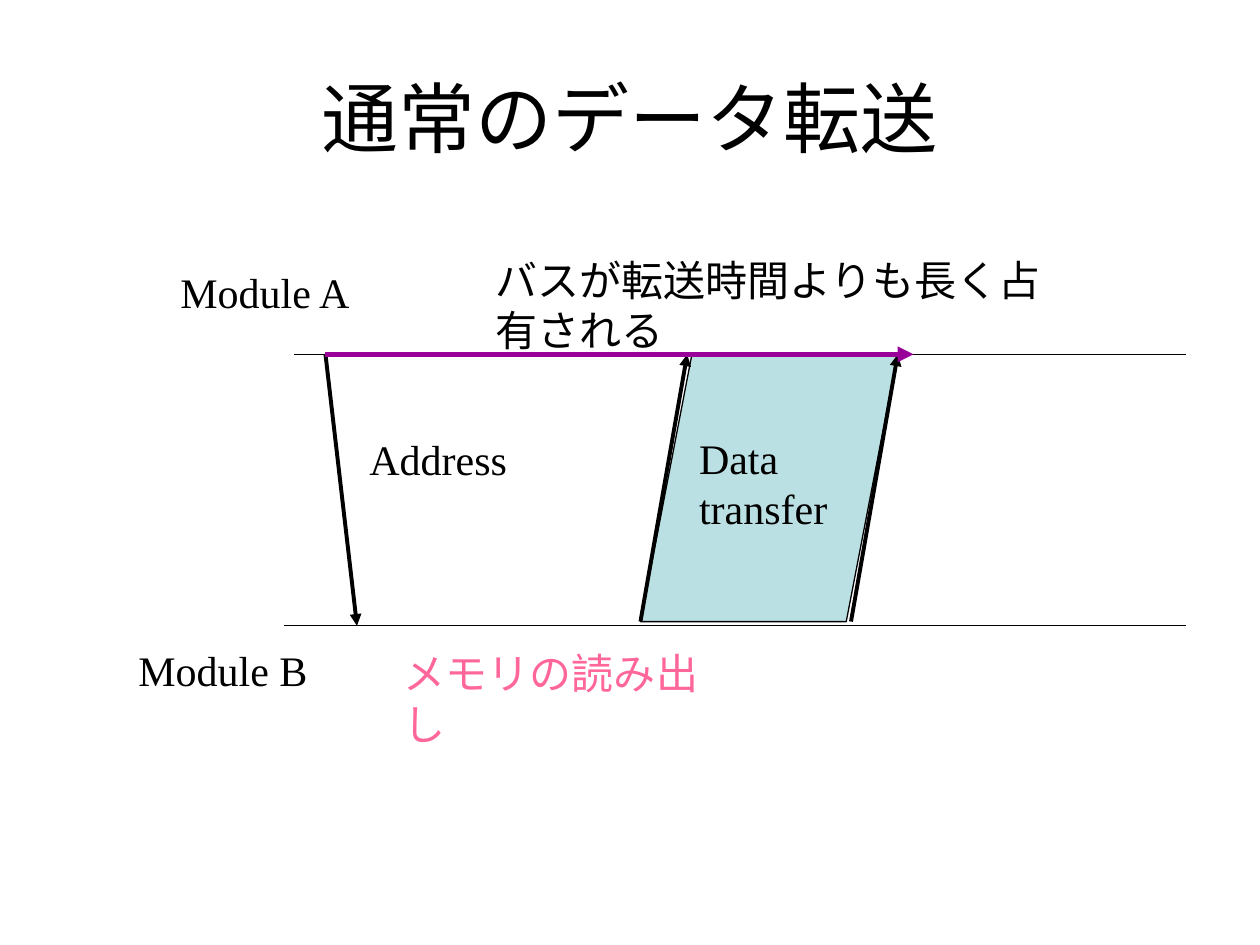
"""Build a timing diagram slide of an ordinary data transfer between two modules."""
from lxml import etree
from pptx import Presentation
from pptx import util as u
from pptx.dml.color import RGBColor
from pptx.enum import shapes, text
from pptx.oxml import ns

BLACK = RGBColor(0x00, 0x00, 0x00)
PURPLE = RGBColor(0x99, 0x00, 0x99)
PINK = RGBColor(0xFF, 0x66, 0x99)
PALE_BLUE = RGBColor(0xBB, 0xE0, 0xE3)

presentation = Presentation()
presentation.slide_width = u.Inches(10)
presentation.slide_height = u.Inches(7.5)
column = presentation.slide_width / 120
row = presentation.slide_height / 90
module_a, module_b = 33.75, 59.6
request, bus_end = 31, 87
data_left, data_width, data_bottom, slant = 61, 24.5, 59.2, 4.45
data_right = data_left + data_width - slant

slide = presentation.slides.add_slide(presentation.slide_layouts[5])


def place(left, top, width, height):
    return int(left * column), int(top * row), int(width * column), int(height * row)


def write(shape, content, size=24, font="Times New Roman", color=BLACK,
          align=text.PP_ALIGN.LEFT, anchor=text.MSO_ANCHOR.TOP,
          fit=text.MSO_AUTO_SIZE.SHAPE_TO_FIT_TEXT):
    frame = shape.text_frame
    frame.text = content
    frame.word_wrap = True
    frame.auto_size = fit
    frame.vertical_anchor = anchor
    paragraph = frame.paragraphs[0]
    paragraph.alignment = align
    paragraph.font.size = u.Pt(size)
    paragraph.font.name = font
    paragraph.font.color.rgb = color


title = slide.shapes.title
title.left, title.top, title.width, title.height = place(6, 3.6, 108, 15)
write(title, "通常のデータ転送", size=44, font="Arial", align=text.PP_ALIGN.CENTER,
      anchor=text.MSO_ANCHOR.MIDDLE, fit=text.MSO_AUTO_SIZE.NONE)

data_block = slide.shapes.add_shape(
    shapes.MSO_SHAPE.FLOWCHART_DATA,
    *place(data_left, module_a, data_width, data_bottom - module_a))
data_block.shadow.inherit = False
data_block.fill.solid()
data_block.fill.fore_color.rgb = PALE_BLUE
data_block.line.color.rgb = BLACK
data_block.line.width = u.Pt(0.75)

lines = [
    (28, module_a, 113, module_a, BLACK, 0.75, False),
    (27, module_b, 113, module_b, BLACK, 0.75, False),
    (request, module_a, 34, module_b, BLACK, 2.25, True),
    (data_left, data_bottom, data_left + slant, module_a, BLACK, 2.25, True),
    (data_right, data_bottom, data_right + slant, module_a, BLACK, 2.25, True),
    (request, module_a, bus_end, module_a, PURPLE, 3, True),
]
for start_x, start_y, end_x, end_y, color, weight, arrow in lines:
    connector = slide.shapes.add_connector(
        shapes.MSO_CONNECTOR.STRAIGHT, *place(start_x, start_y, end_x, end_y))
    connector.line.color.rgb = color
    connector.line.width = u.Pt(weight)
    if arrow:
        etree.SubElement(connector.line._get_or_add_ln(), ns.qn("a:tailEnd"), type="triangle")
    etree.SubElement(connector._element.spPr, ns.qn("a:effectLst"))

labels = [
    ("Address", 34, 40.7, 23, 6, BLACK),
    ("メモリの読み出し", 37.3, 61.1, 31, 6, PINK),
    ("Data transfer", 65.4, 40.6, 15.6, 15.6, BLACK),
    ("Module A", 16, 24.75, 25, 6, BLACK),
    ("Module B", 12, 60.75, 25, 6, BLACK),
    ("バスが転送時間よりも長く占有される", 46, 23.6, 55, 10.9, BLACK),
]
for content, left, top, width, height, color in labels:
    label = slide.shapes.add_textbox(*place(left, top, width, height))
    write(label, content, color=color)

presentation.save("out.pptx")
